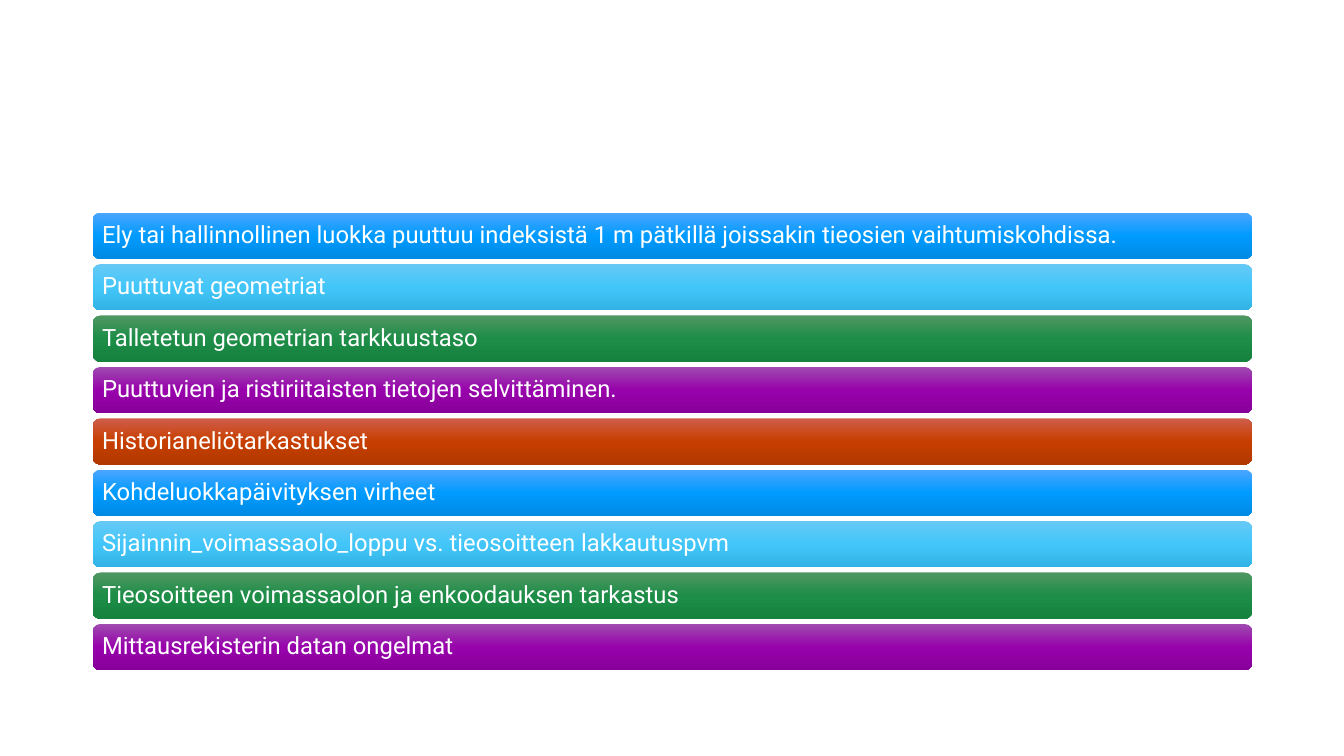
from copy import deepcopy

from pptx import Presentation
from pptx.dml.color import RGBColor
from pptx.enum.shapes import MSO_SHAPE
from pptx.enum.text import MSO_ANCHOR, PP_ALIGN
from pptx.oxml.ns import qn
from pptx.util import Pt

ROUNDED = MSO_SHAPE.ROUNDED_RECTANGLE
MIDDLE = MSO_ANCHOR.MIDDLE
LEFT = PP_ALIGN.LEFT

EMU_PER_PX = 9144  # 100 px to the inch
SLIDE_WIDTH, SLIDE_HEIGHT = 1333, 750

WHITE = RGBColor(0xFF, 0xFF, 0xFF)
# Top, middle and bottom colour of each bar
BLUE = RGBColor(0x4B, 0xA5, 0xFF), RGBColor(0x00, 0x9B, 0xFF), RGBColor(0x00, 0x8A, 0xE3)
SKY = RGBColor(0x66, 0xC9, 0xF5), RGBColor(0x42, 0xC6, 0xF9), RGBColor(0x33, 0xB3, 0xE5)
GREEN = RGBColor(0x50, 0x97, 0x63), RGBColor(0x1D, 0x8D, 0x47), RGBColor(0x15, 0x82, 0x3E)
PURPLE = RGBColor(0x9F, 0x4B, 0xAF), RGBColor(0x97, 0x02, 0xAB), RGBColor(0x88, 0x00, 0x9A)
ORANGE = RGBColor(0xCF, 0x5D, 0x4B), RGBColor(0xC7, 0x3F, 0x00), RGBColor(0xB1, 0x38, 0x00)
BAR_COLOURS = [BLUE, SKY, GREEN, PURPLE, ORANGE]

BAR_LEFT, BAR_TOP, BAR_WIDTH, BAR_HEIGHT = 92, 211, 1150, 46
BAR_PITCH = 51

TOPICS = [
    "Ely tai hallinnollinen luokka puuttuu indeksistä 1 m pätkillä joissakin tieosien vaihtumiskohdissa.",
    "Puuttuvat geometriat",
    "Talletetun geometrian tarkkuustaso",
    "Puuttuvien ja ristiriitaisten tietojen selvittäminen.",
    "Historianeliötarkastukset",
    "Kohdeluokkapäivityksen virheet",
    "Sijainnin_voimassaolo_loppu vs. tieosoitteen lakkautuspvm",
    "Tieosoitteen voimassaolon ja enkoodauksen tarkastus",
    "Mittausrekisterin datan ongelmat",
]


def px(length):
    return length * EMU_PER_PX


class SlideBuilder:
    font_name = "Roboto"
    font_size = Pt(17)
    margin = px(7)

    def __init__(self, slide):
        self.slide = slide

    def gradient(self, shape, colours):
        """Fill from top to bottom with evenly spaced colours."""
        fill = shape.fill
        fill.gradient()
        fill.gradient_angle = 270
        stop_list = next(shape._element.spPr.iter(qn("a:gsLst")))
        while len(stop_list) < len(colours):
            stop_list.append(deepcopy(stop_list[0]))
        for index, (stop, colour) in enumerate(zip(fill.gradient_stops, colours)):
            stop.position = index / (len(colours) - 1)
            stop.color.rgb = colour

    def bar(self, left, top, width, height, text, colours):
        shape = self.slide.shapes.add_shape(ROUNDED, px(left), px(top), px(width), px(height))
        shape.shadow.inherit = False
        shape.line.fill.background()
        self.gradient(shape, colours)

        frame = shape.text_frame
        frame.word_wrap = True
        frame.vertical_anchor = MIDDLE
        frame.margin_left = frame.margin_right = self.margin
        frame.margin_top = frame.margin_bottom = self.margin

        paragraph = frame.paragraphs[0]
        paragraph.text = text
        paragraph.alignment = LEFT
        paragraph.line_spacing = 0.9
        paragraph.font.name = self.font_name
        paragraph.font.size = self.font_size
        paragraph.font.color.rgb = WHITE


def main():
    presentation = Presentation()
    presentation.slide_width = px(SLIDE_WIDTH)
    presentation.slide_height = px(SLIDE_HEIGHT)
    blank_layout = presentation.slide_layouts[6]
    builder = SlideBuilder(presentation.slides.add_slide(blank_layout))

    # List of topics, with the bar colours in rotation
    for row, topic in enumerate(TOPICS):
        colours = BAR_COLOURS[row % len(BAR_COLOURS)]
        builder.bar(BAR_LEFT, BAR_TOP + row * BAR_PITCH, BAR_WIDTH, BAR_HEIGHT, topic, colours)

    presentation.save("out.pptx")


if __name__ == "__main__":
    main()
